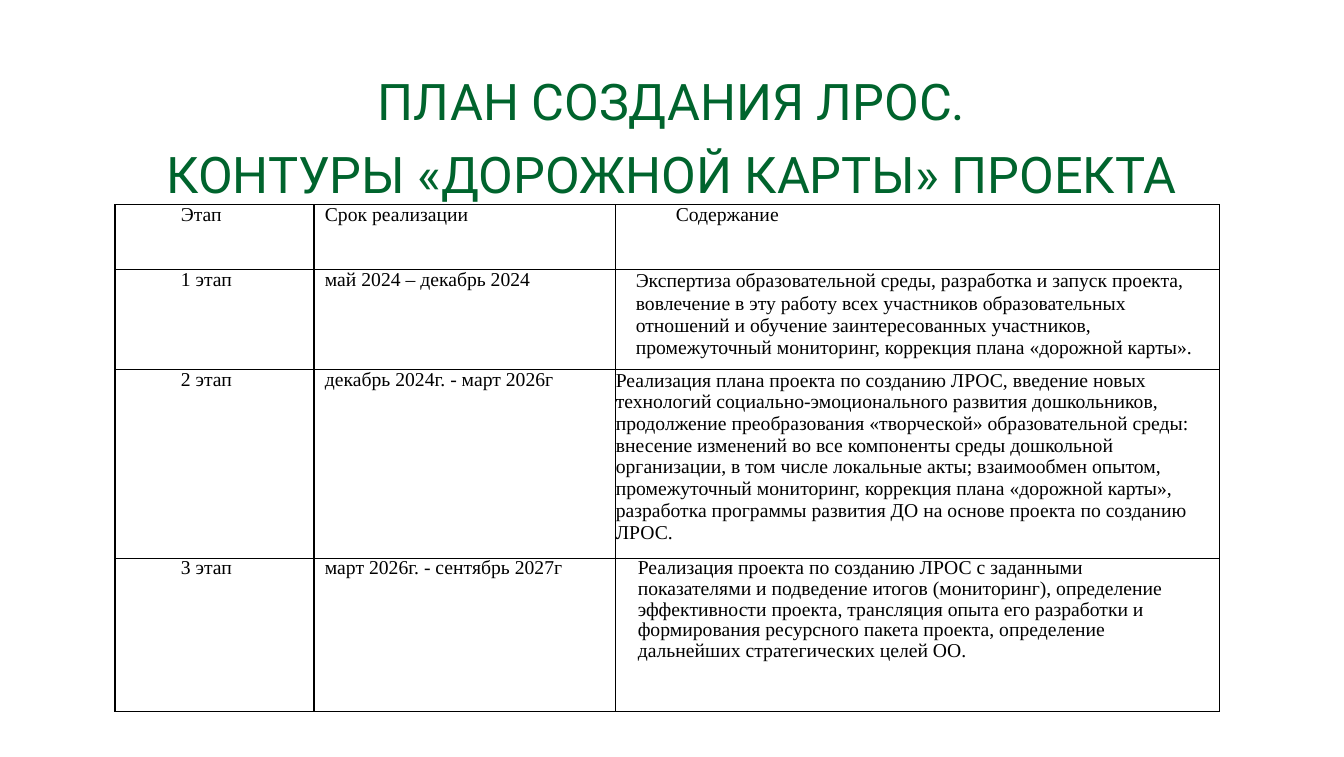
from lxml import etree
from pptx import Presentation
from pptx.dml.color import RGBColor
from pptx.enum.text import MSO_AUTO_SIZE, PP_ALIGN
from pptx.oxml.ns import qn
from pptx.util import Emu, Inches, Pt

PX = 914400 / 101
GREEN = RGBColor(0x00, 0x64, 0x2D)
BLACK = RGBColor(0x00, 0x00, 0x00)
CENTER = PP_ALIGN.CENTER
GROW = MSO_AUTO_SIZE.SHAPE_TO_FIT_TEXT

# Content
TITLE = ["ПЛАН СОЗДАНИЯ ЛРОС.", "КОНТУРЫ «ДОРОЖНОЙ КАРТЫ» ПРОЕКТА"]
STAGES = [
    ("Этап", "Срок реализации", "Содержание"),
    ("1 этап", "май 2024 – декабрь 2024",
     "Экспертиза образовательной среды, разработка и запуск проекта, "
     "вовлечение в эту работу всех участников образовательных отношений "
     "и обучение заинтересованных участников, промежуточный мониторинг, "
     "коррекция плана «дорожной карты»."),
    ("2 этап", "декабрь 2024г. - март 2026г",
     "Реализация плана проекта по созданию ЛРОС, введение новых "
     "технологий социально-эмоционального развития дошкольников, "
     "продолжение преобразования «творческой» образовательной среды: "
     "внесение изменений во все компоненты среды дошкольной организации, "
     "в том числе локальные акты; взаимообмен опытом, промежуточный "
     "мониторинг, коррекция плана «дорожной карты», разработка программы "
     "развития ДО на основе проекта по созданию ЛРОС."),
    ("3 этап", "март 2026г. - сентябрь 2027г",
     "Реализация проекта по созданию ЛРОС с заданными показателями и "
     "подведение итогов (мониторинг), определение эффективности проекта, "
     "трансляция опыта его разработки и формирования ресурсного пакета "
     "проекта, определение дальнейших стратегических целей ОО."),
]

# Layout in px, slide size in inches
SLIDE_SIZE = (13.31, 7.5)
TITLE_BOX = (0, 77, 1344, 128)
TABLE_ORIGIN = (115, 205)
COLUMN_WIDTHS = [199, 302, 604]
ROW_HEIGHTS = [65, 100, 188, 153]
STAGE_INDENT, TERM_INDENT = 66, 11
CONTENT_INDENTS = [60, 20, 0, 22]
CONTENT_RIGHT = 20
FIXED_LINE = Pt(14.8)
CONTENT_SPACING = [FIXED_LINE, 1.03, 1.0, FIXED_LINE]

TITLE_FONT = {"name": "Roboto", "size": Pt(36)}
TABLE_FONT = {"name": "Times New Roman", "size": Pt(14)}


def px(length):
    return Emu(round(length * PX))


def apply(target, values):
    for name, value in values.items():
        setattr(target, name, value)


def style_text(paragraph, font_values, color):
    apply(paragraph.font, font_values)
    paragraph.font.color.rgb = color


def add_borders(cell):
    properties = cell._tc.get_or_add_tcPr()
    for side in ("lnL", "lnR", "lnT", "lnB"):
        line = etree.SubElement(properties, qn(f"a:{side}"), w=str(Pt(1)))
        fill = etree.SubElement(line, qn("a:solidFill"))
        etree.SubElement(fill, qn("a:srgbClr"), val=str(BLACK))


def add_title(slide):
    frame = slide.shapes.add_textbox(*map(px, TITLE_BOX)).text_frame
    apply(frame, {"margin_left": 0, "margin_right": 0, "margin_top": 0,
                  "margin_bottom": 0, "word_wrap": True, "auto_size": GROW})
    frame.text = "\n".join(TITLE)
    for paragraph in frame.paragraphs:
        apply(paragraph, {"alignment": CENTER, "line_spacing": 0.9})
        style_text(paragraph, TITLE_FONT, GREEN)
    frame.paragraphs[1].space_before = Pt(13.3)


def add_stage_table(slide):
    size = (sum(COLUMN_WIDTHS), sum(ROW_HEIGHTS))
    table = slide.shapes.add_table(
        len(ROW_HEIGHTS), len(COLUMN_WIDTHS), *map(px, TABLE_ORIGIN + size)).table
    apply(table, {"first_row": False, "horz_banding": False})
    for column, width in zip(table.columns, COLUMN_WIDTHS):
        column.width = px(width)
    for r, (row, height) in enumerate(zip(table.rows, ROW_HEIGHTS)):
        row.height = px(height)
        indents = (STAGE_INDENT, TERM_INDENT, CONTENT_INDENTS[r])
        spacings = (FIXED_LINE, FIXED_LINE, CONTENT_SPACING[r])
        rights = (0, 0, CONTENT_RIGHT)
        for cell, text, indent, spacing, right in zip(
                row.cells, STAGES[r], indents, spacings, rights):
            apply(cell, {"text": text, "margin_left": px(indent),
                         "margin_right": px(right),
                         "margin_top": 0, "margin_bottom": 0})
            add_borders(cell)
            cell.fill.background()
            paragraph = cell.text_frame.paragraphs[0]
            paragraph.line_spacing = spacing
            style_text(paragraph, TABLE_FONT, BLACK)


def main():
    deck = Presentation()
    deck.slide_width, deck.slide_height = map(Inches, SLIDE_SIZE)
    slide = deck.slides.add_slide(deck.slide_layouts[6])
    add_title(slide)
    add_stage_table(slide)
    deck.save("out.pptx")


if __name__ == "__main__":
    main()
